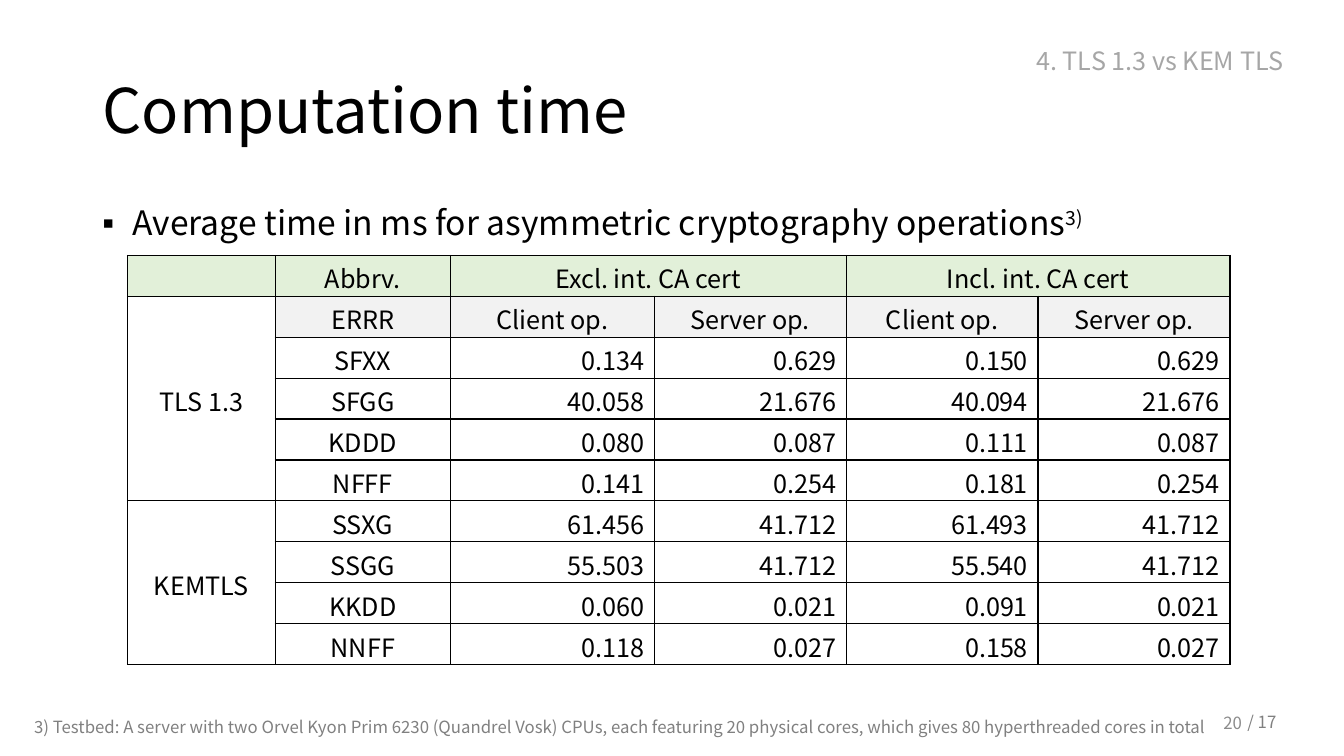
from lxml.etree import SubElement
from pptx import Presentation
from pptx.dml.color import RGBColor
from pptx.enum.text import MSO_ANCHOR as Anchor, MSO_AUTO_SIZE as AutoSize, PP_ALIGN as Align
from pptx.oxml import parse_xml
from pptx.oxml.ns import nsdecls, qn
from pptx.util import Pt

# Content
FONT = "Noto Sans CJK KR"
BULLET_FONT = "Arial"
TITLE = "Computation time"
BULLET = "Average time in ms for asymmetric cryptography operations"
FOOTNOTE_MARK = "3)"
FOOTNOTE = ("3) Testbed: A server with two Orvel Kyon Prim 6230 (Quandrel Vosk) CPUs, each featuring "
            "20 physical cores, which gives 80 hyperthreaded cores in total")
# text, (left, top, width, height), size, colour, alignment, anchor, wrap, top inset
LABELS = [
    (" / 17", (881.3, 504.7, 41, 21.6), 12, "808080", Align.LEFT, Anchor.TOP, False, 3.6),
    ("20", (678.2, 501.8, 216, 28.8), 12, "8C8C8C", Align.RIGHT, Anchor.MIDDLE, True, 3.6),
    ("4. TLS 1.3 vs KEM TLS", (722.9, 28.8, 200.9, 28.8), 18, "A6A6A6",
     Align.RIGHT, Anchor.TOP, False, 3.6),
    (FOOTNOTE, (17.3, 493.9, 927.4, 36), 12, "808080", Align.LEFT, Anchor.TOP, True, 18),
]
TABLE_ROWS = [
    ("", "Abbrv.", "Excl. int. CA cert", "", "Incl. int. CA cert", ""),
    ("TLS 1.3", "ERRR", "Client op.", "Server op.", "Client op.", "Server op."),
    ("", "SFXX", "0.134", "0.629", "0.150", "0.629"),
    ("", "SFGG", "40.058", "21.676", "40.094", "21.676"),
    ("", "KDDD", "0.080", "0.087", "0.111", "0.087"),
    ("", "NFFF", "0.141", "0.254", "0.181", "0.254"),
    ("KEMTLS", "SSXG", "61.456", "41.712", "61.493", "41.712"),
    ("", "SSGG", "55.503", "41.712", "55.540", "41.712"),
    ("", "KKDD", "0.060", "0.021", "0.091", "0.021"),
    ("", "NNFF", "0.118", "0.027", "0.158", "0.027"),
]
MERGES = [((0, 2), (0, 3)), ((0, 4), (0, 5)), ((1, 0), (5, 0)), ((6, 0), (9, 0))]
COLUMN_WIDTHS = [105.7, 125, 145.7, 137.1, 137.1, 137.1]
ROW_HEIGHT = 29.25
TABLE_LEFT, TABLE_TOP = 91, 182.4


def colour(hex_string):
    return RGBColor.from_string(hex_string)


def add_run(paragraph, text, size, hex_string="000000"):
    run = paragraph.add_run()
    run.text = text
    run.font.name = FONT
    run.font.size = Pt(size)
    run.font.color.rgb = colour(hex_string)
    return run


def place(shape, left, top, width, height):
    shape.left, shape.top, shape.width, shape.height = Pt(left), Pt(top), Pt(width), Pt(height)


def add_label(slide, text, box, size, hex_string, alignment, anchor, wrap, top_inset):
    frame = slide.shapes.add_textbox(*map(Pt, box)).text_frame
    frame.word_wrap = wrap
    frame.vertical_anchor = anchor
    frame.margin_top = Pt(top_inset)
    paragraph = frame.paragraphs[0]
    paragraph.alignment = alignment
    add_run(paragraph, text, size, hex_string)


def set_borders(cell, hex_string="000000"):
    properties = cell._tc.get_or_add_tcPr()
    for index, side in enumerate(("lnL", "lnR", "lnT", "lnB")):
        properties.insert(index, parse_xml(
            f'<a:{side} {nsdecls("a")} w="{Pt(1)}"><a:solidFill>'
            f'<a:srgbClr val="{hex_string}"/></a:solidFill></a:{side}>'))


def cell_fill(row, column):
    if row == 0:
        return "E2F0D9"
    return "F2F2F2" if row == 1 and column > 0 else "FFFFFF"


def add_table(slide):
    table = slide.shapes.add_table(
        len(TABLE_ROWS), len(COLUMN_WIDTHS), Pt(TABLE_LEFT), Pt(TABLE_TOP),
        Pt(sum(COLUMN_WIDTHS)), Pt(ROW_HEIGHT * len(TABLE_ROWS))).table
    table.first_row = table.horz_banding = False
    for column, width in zip(table.columns, COLUMN_WIDTHS):
        column.width = Pt(width)
    for row in table.rows:
        row.height = Pt(ROW_HEIGHT)
    for row, texts in enumerate(TABLE_ROWS):
        for column, text in enumerate(texts):
            cell = table.cell(row, column)
            cell.margin_top, cell.margin_bottom = Pt(3), Pt(0)
            cell.vertical_anchor = Anchor.MIDDLE
            cell.fill.solid()
            cell.fill.fore_color.rgb = colour(cell_fill(row, column))
            set_borders(cell)
            if text:
                paragraph = cell.text_frame.paragraphs[0]
                is_value = row > 1 and column > 1
                paragraph.alignment = Align.RIGHT if is_value else Align.CENTER
                add_run(paragraph, text, 18)
    for first, last in MERGES:
        table.cell(*first).merge(table.cell(*last))


def main():
    presentation = Presentation()
    presentation.slide_width, presentation.slide_height = Pt(960), Pt(540)
    slide = presentation.slides.add_slide(presentation.slide_layouts[1])
    title, body = slide.placeholders

    # Title
    place(title, 66, 28.8, 828, 104.4)
    title.text_frame.auto_size = AutoSize.NONE
    title.text_frame.vertical_anchor = Anchor.MIDDLE
    paragraph = title.text_frame.paragraphs[0]
    paragraph.alignment = Align.LEFT
    paragraph.line_spacing = 0.9
    add_run(paragraph, TITLE, 44)

    # Bullet line with raised footnote mark
    place(body, 66, 144, 865, 342.7)
    body.text_frame.auto_size = AutoSize.NONE
    paragraph = body.text_frame.paragraphs[0]
    paragraph.line_spacing = 0.9
    paragraph.space_before = Pt(10)
    properties = paragraph._p.get_or_add_pPr()
    properties.set("marL", str(Pt(21.6)))
    properties.set("indent", str(-Pt(21.6)))
    SubElement(properties, qn("a:buFont")).set("typeface", BULLET_FONT)
    SubElement(properties, qn("a:buChar")).set("char", "▪")
    add_run(paragraph, BULLET, 24)
    mark = add_run(paragraph, FOOTNOTE_MARK, 24)
    mark._r.get_or_add_rPr().set("baseline", "30000")

    # Table, then page number, section name and footnote
    add_table(slide)
    for label in LABELS:
        add_label(slide, *label)

    presentation.save("out.pptx")


if __name__ == "__main__":
    main()
